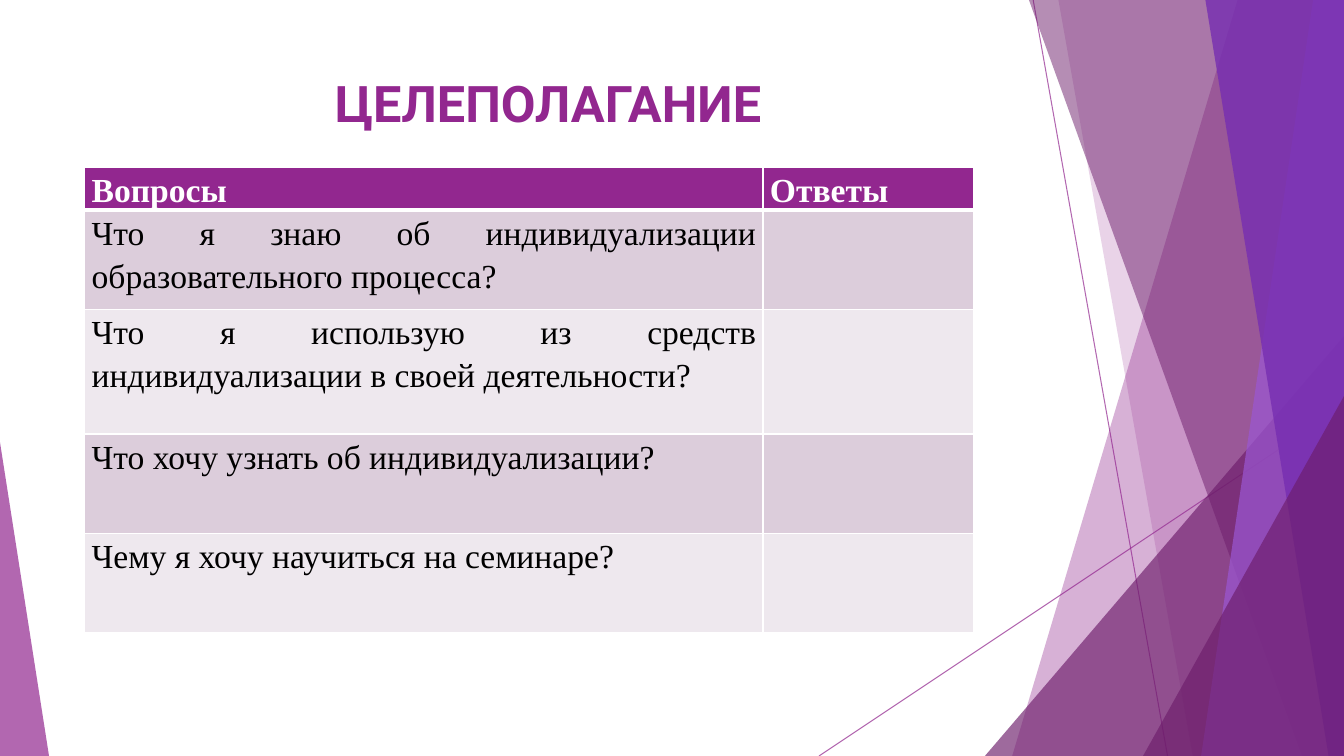
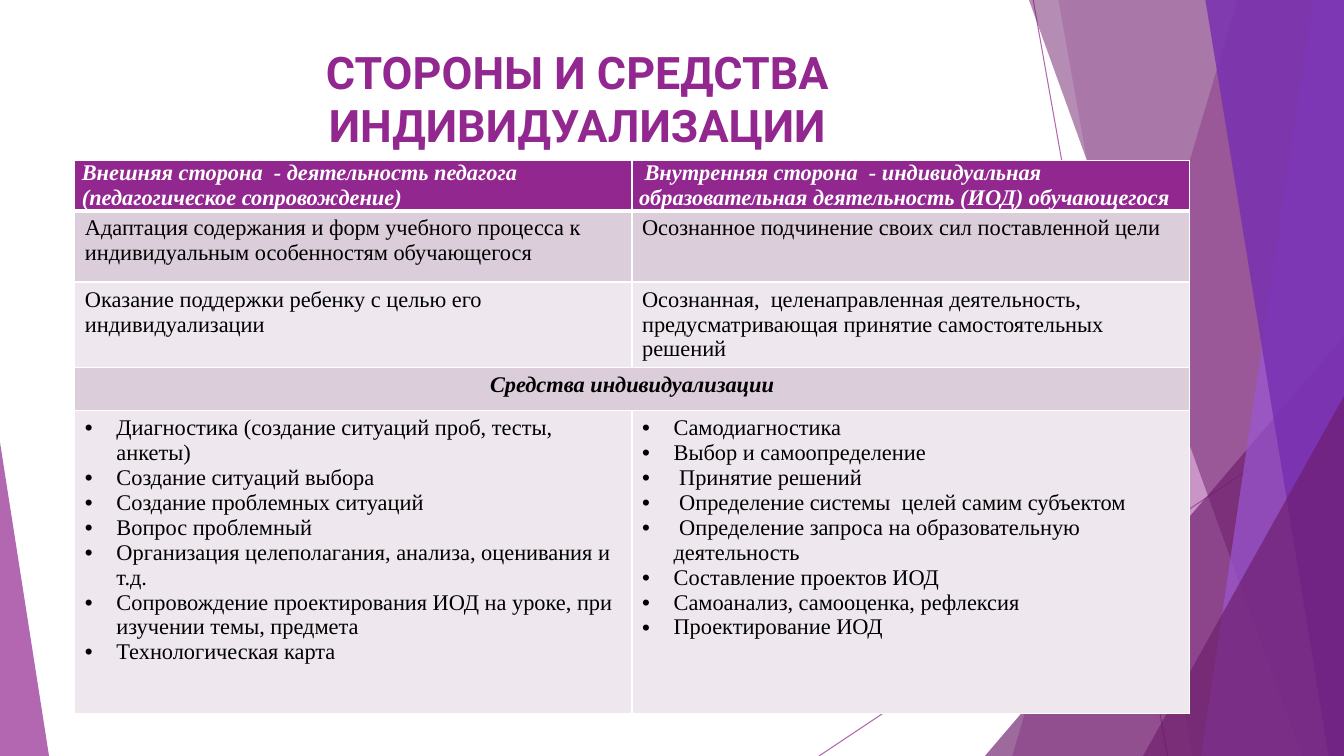
from lxml.etree import SubElement
from pptx import Presentation
from pptx.dml.color import RGBColor
from pptx.enum.shapes import MSO_CONNECTOR, MSO_SHAPE
from pptx.enum.text import MSO_ANCHOR, MSO_AUTO_SIZE, PP_ALIGN
from pptx.oxml.ns import qn
from pptx.util import Pt

# Shared look
WIDTH, HEIGHT = 960, 540
PURPLE, PLUM, VIOLET, INDIGO = "92278F", "6D1D6B", "9B57D3", "762EB1"
WHITE, BLACK = "FFFFFF", "000000"
BANDS = ("DCCDDB", "EEE8EE")
TITLE_FONT, BODY_FONT = "Roboto", "Times New Roman"
BULLET_INDENT = 22.5

# Decoration: lines as x1, y1, x2, y2; bands as top x, bottom x, both reaching
# the right edge; triangles as left, top, width, apex position
RAYS = [(738, 0, 834, 540), (960, 290, 585, 540)]
SHARDS = [
    ("band", (884, 723), PURPLE, 36),
    ("band", (756, 852), PURPLE, 20),
    ("triangle", (703.5, 240, 256.5, 1), PLUM, 66),
    ("band", (735, 930), PLUM, 50),
    ("band", (938, 858), VIOLET, 70),
    ("band", (861, 949), INDIGO, 80),
    ("triangle", (816.5, 283, 143.5, 1), PLUM, 66),
    ("triangle", (0, 316, 35, 0), PURPLE, 70),
]

# Content
GOALS = [
    ["Вопросы", "Ответы"],
    ["Что я знаю об индивидуализации образовательного процесса?", ""],
    ["Что я использую из средств индивидуализации в своей деятельности?", ""],
    ["Что хочу узнать об индивидуализации?", ""],
    ["Чему я хочу научиться на семинаре?", ""],
]
SIDES = [
    ["Внешняя сторона  - деятельность педагога (педагогическое сопровождение)",
     " Внутренняя сторона  - индивидуальная образовательная деятельность (ИОД) обучающегося"],
    ["Адаптация содержания и форм учебного процесса к индивидуальным особенностям обучающегося",
     "Осознанное подчинение своих сил поставленной цели"],
    ["Оказание поддержки ребенку с целью его индивидуализации",
     "Осознанная,  целенаправленная деятельность, предусматривающая принятие "
     "самостоятельных решений"],
    ["Средства индивидуализации"],
    [["Диагностика (создание ситуаций проб, тесты, анкеты)",
      "Создание ситуаций выбора",
      "Создание проблемных ситуаций",
      "Вопрос проблемный",
      "Организация целеполагания, анализа, оценивания и т.д.",
      "Сопровождение проектирования ИОД на уроке, при изучении темы, предмета",
      "Технологическая карта"],
     ["Самодиагностика",
      "Выбор и самоопределение",
      " Принятие решений",
      " Определение системы  целей самим субъектом",
      " Определение запроса на образовательную деятельность",
      "Составление проектов ИОД",
      "Самоанализ, самооценка, рефлексия",
      "Проектирование ИОД"]],
]


def rgb(value):
    return RGBColor.from_string(value)


def set_font(font, name, size, color, bold=False, italic=False):
    font.name, font.size = name, Pt(size)
    font.bold, font.italic = bold, italic
    font.color.rgb = rgb(color)


def set_alpha(element, percent):
    color = next(element.iter(qn("a:srgbClr")))
    SubElement(color, qn("a:alpha"), val=str(percent * 1000))


# Decoration
def add_ray(slide, x1, y1, x2, y2):
    line = slide.shapes.add_connector(
        MSO_CONNECTOR.STRAIGHT, Pt(x1), Pt(y1), Pt(x2), Pt(y2))
    line.line.color.rgb = rgb(PURPLE)
    line.line.width = Pt(0.75)
    props = line.element.spPr
    set_alpha(props, 70)
    SubElement(props, qn("a:effectLst"))
    return line


def add_shard(slide, kind, geometry, color, opacity):
    if kind == "band":
        top_x, bottom_x = geometry
        outline = slide.shapes.build_freeform(top_x, 0, scale=Pt(1))
        outline.add_line_segments(
            [(WIDTH, 0), (WIDTH, HEIGHT), (bottom_x, HEIGHT)], close=True)
        sp = outline.convert_to_shape()
    else:
        left, top, width, apex = geometry
        sp = slide.shapes.add_shape(
            MSO_SHAPE.ISOSCELES_TRIANGLE,
            Pt(left), Pt(top), Pt(width), Pt(HEIGHT - top))
        sp.adjustments[0] = apex
    sp.shadow.inherit = False
    sp.fill.solid()
    sp.fill.fore_color.rgb = rgb(color)
    set_alpha(sp.element.spPr, opacity)
    sp.line.fill.background()
    return sp


def decorate_layout(layout, slide):
    """Draw the decoration on a slide, then move it to the layout."""
    shapes = [add_ray(slide, *ray) for ray in RAYS]
    shapes += [add_shard(slide, *shard) for shard in SHARDS]
    for sp in shapes:
        layout.shapes.element.append(sp.element)


# Title
def set_title(slide, text, box, size):
    title = slide.shapes.title
    title.left, title.top, title.width, title.height = map(Pt, box)
    tf = title.text_frame
    tf.text = text
    tf.word_wrap = True
    tf.auto_size = MSO_AUTO_SIZE.NONE
    tf.vertical_anchor = MSO_ANCHOR.TOP
    p = tf.paragraphs[0]
    p.alignment = PP_ALIGN.CENTER
    set_font(p.font, TITLE_FONT, size, PURPLE, bold=True)


# Table
def set_borders(cell, bottom):
    props = cell._tc.get_or_add_tcPr()
    for side, width in (("L", 1), ("R", 1), ("T", 1), ("B", bottom)):
        line = SubElement(props, qn(f"a:ln{side}"), w=str(Pt(width)))
        fill = SubElement(line, qn("a:solidFill"))
        SubElement(fill, qn("a:srgbClr"), val=WHITE)


def add_bullet(p):
    props = p._p.get_or_add_pPr()
    props.set("marL", str(Pt(BULLET_INDENT)))
    props.set("indent", str(-Pt(BULLET_INDENT)))
    SubElement(props, qn("a:buFont"), typeface="Arial")
    SubElement(props, qn("a:buChar"), char="•")


def fill_cell(cell, content, size, color, bold, italic, align, spacing):
    bulleted = isinstance(content, list)
    tf = cell.text_frame
    tf.text = "\n".join(content) if bulleted else content
    for p in tf.paragraphs:
        p.alignment = align
        if spacing:
            p.line_spacing = spacing
        if bulleted:
            add_bullet(p)
        set_font(p.font, BODY_FONT, size, color, bold, italic)


def add_table(slide, rows, left, top, widths, heights, size, align=PP_ALIGN.LEFT,
              spacing=None, header_italic=False, tight_body=False):
    table = slide.shapes.add_table(
        len(rows), len(widths), Pt(left), Pt(top),
        Pt(sum(widths)), Pt(sum(heights))).table
    for column, width in zip(table.columns, widths):
        column.width = Pt(width)
    for i, (row, height) in enumerate(zip(rows, heights)):
        table.rows[i].height = Pt(height)
        header = i == 0
        spanning = len(row) == 1
        for j in range(len(widths)):
            cell = table.cell(i, j)
            set_borders(cell, 3 if header else 1)
            cell.fill.solid()
            cell.fill.fore_color.rgb = rgb(PURPLE if header else BANDS[(i - 1) % 2])
            if header or tight_body:
                cell.margin_left = cell.margin_right = Pt(5)
                cell.margin_top = cell.margin_bottom = 0
            if j < len(row) and row[j]:
                fill_cell(cell, row[j], size, WHITE if header else BLACK,
                          header or spanning, header and header_italic or spanning,
                          PP_ALIGN.CENTER if spanning else align, spacing)
        if spanning:
            table.cell(i, 0).merge(table.cell(i, len(widths) - 1))


def main():
    prs = Presentation()
    prs.slide_width, prs.slide_height = Pt(WIDTH), Pt(HEIGHT)
    layout = prs.slide_layouts[5]

    # Goal setting
    s = prs.slides.add_slide(layout)
    decorate_layout(layout, s)
    set_title(s, "ЦЕЛЕПОЛАГАНИЕ", (53, 48, 677, 60), 36)
    add_table(s, GOALS, 60.5, 119.5, (484.5, 150.5), (30, 71, 89, 71, 71), 24,
              align=PP_ALIGN.JUSTIFY, spacing=1.15, tight_body=True)

    # Sides and means of individualisation
    s = prs.slides.add_slide(layout)
    set_title(s, "СТОРОНЫ И СРЕДСТВА ИНДИВИДУАЛИЗАЦИИ", (53, 28, 719, 94), 32)
    add_table(s, SIDES, 53.5, 114.5, (398, 398), (36, 51, 61, 31, 216), 16,
              header_italic=True)

    prs.save("out.pptx")


if __name__ == "__main__":
    main()
